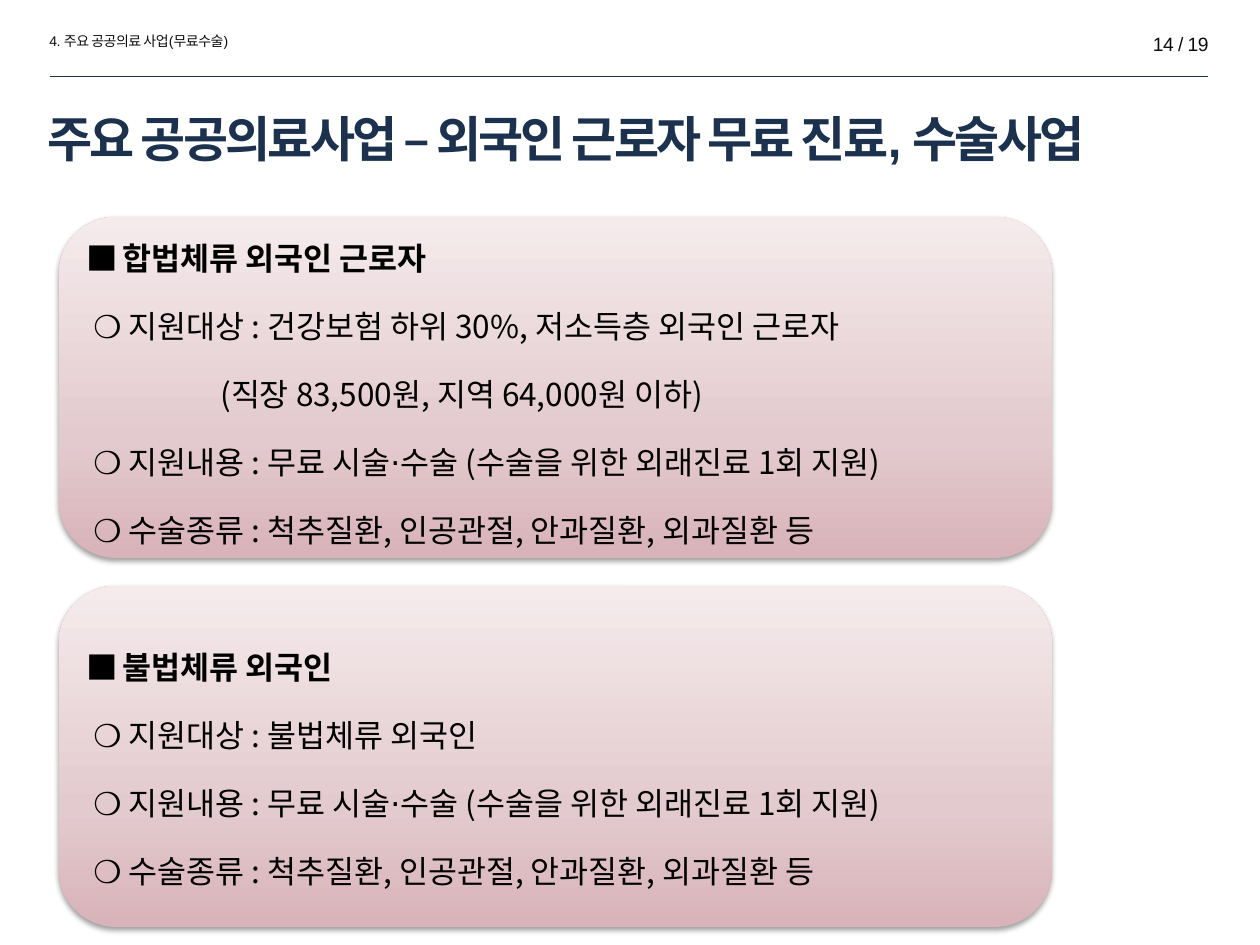
from lxml import etree
from pptx import Presentation
from pptx import util as u
from pptx.dml.color import RGBColor
from pptx.enum import shapes, text
from pptx.oxml import parse_xml
from pptx.oxml.ns import qn

NAVY = RGBColor(0x1C, 0x31, 0x4E)
INK = RGBColor(0x0D, 0x0D, 0x0D)
BLACK = RGBColor(0, 0, 0)
ROSE_STOPS = (
    (0, RGBColor(0xD8, 0xB3, 0xB9)),
    (35, RGBColor(0xE3, 0xCA, 0xCE)),
    (100, RGBColor(0xF5, 0xEB, 0xEC)),
)
LATIN = "Arial"
KOREAN = "Noto Sans CJK KR"
NAMESPACE = 'xmlns:a="http://schemas.openxmlformats.org/drawingml/2006/main"'

CONTENT = "지원내용 : 무료 시술⋅수술 (수술을 위한 외래진료 1회 지원)"
SURGERY = "수술종류 : 척추질환, 인공관절, 안과질환, 외과질환 등"
SECTIONS = (
    ("합법체류 외국인 근로자", (
        ("❍ 지원대상 : 건강보험 하위 30%, 저소득층 외국인 근로자", 7),
        ("(직장 83,500원, 지역 64,000원 이하)", 134),
        ("❍ " + CONTENT, 7),
        ("❍ " + SURGERY, 7),
    )),
    ("불법체류 외국인", (
        ("❍ 지원대상 : 불법체류 외국인", 7),
        ("❍ " + CONTENT, 7),
        ("❍ " + SURGERY, 7),
    )),
)


class SlideBuilder:
    pixels_per_inch = 126

    def __init__(self, presentation):
        self.slide = presentation.slides.add_slide(presentation.slide_layouts[6])

    def px(self, *lengths):
        return [u.Emu(round(n * 914400 / self.pixels_per_inch)) for n in lengths]

    def typeface(self, font, name, spacing=0):
        font.name = name
        properties = font._rPr
        etree.SubElement(properties, qn("a:ea")).set("typeface", KOREAN)
        if spacing:
            properties.set("spc", str(round(spacing * 100)))

    def panel(self, left, top, width, height):
        shape = self.slide.shapes.add_shape(
            shapes.MSO_SHAPE.ROUNDED_RECTANGLE, *self.px(left, top, width, height))
        shape.line.fill.background()
        stops = "".join(
            f'<a:gs pos="{position * 1000}"><a:srgbClr val="{color}"/></a:gs>'
            for position, color in ROSE_STOPS)
        properties = shape._element.spPr
        properties.find(qn("a:prstGeom")).addnext(parse_xml(
            f'<a:gradFill {NAMESPACE} rotWithShape="1"><a:gsLst>{stops}</a:gsLst>'
            '<a:lin ang="16200000" scaled="0"/></a:gradFill>'))
        properties.append(parse_xml(
            f'<a:effectLst {NAMESPACE}><a:outerShdw blurRad="39400" dist="20300" '
            'dir="5400000" rotWithShape="0"><a:srgbClr val="000000">'
            '<a:alpha val="38000"/></a:srgbClr></a:outerShdw></a:effectLst>'))

    def rule(self, left, right, top):
        connector = self.slide.shapes.add_connector(
            shapes.MSO_CONNECTOR.STRAIGHT, *self.px(left, top, right, top))
        connector.line.color.rgb = NAVY
        connector.line.width = u.Pt(0.25)
        etree.SubElement(connector._element.spPr, qn("a:effectLst"))

    def frame(self, left, top, width, height):
        box = self.slide.shapes.add_textbox(*self.px(left, top, width, height))
        box.text_frame.word_wrap = True
        return box.text_frame

    def label(self, place, words, size, color, spacing, bold=False,
              align=text.PP_ALIGN.LEFT, anchor=text.MSO_ANCHOR.TOP):
        frame = self.frame(*place)
        frame.vertical_anchor = anchor
        paragraph = frame.paragraphs[0]
        paragraph.text = words
        paragraph.alignment = align
        font = paragraph.font
        font.size, font.bold = u.Pt(size), bold
        font.color.rgb = color
        self.typeface(font, LATIN, spacing)

    def body_paragraph(self, frame, bold=False, indent=0):
        first = frame.paragraphs[0]
        paragraph = frame.add_paragraph() if first.runs else first
        paragraph.alignment = text.PP_ALIGN.JUSTIFY
        paragraph.line_spacing = 1.8
        paragraph._p.get_or_add_pPr().set("marL", str(self.px(indent)[0]))
        font = paragraph.font
        font.size, font.bold = u.Pt(18), bold
        font.color.rgb = BLACK
        return paragraph

    def outline(self, place, sections):
        frame = self.frame(*place)
        for number, (heading, items) in enumerate(sections):
            paragraph = self.body_paragraph(frame, bold=True)
            if number:
                paragraph.space_before = u.Pt(38.9)
            for words, name, spacing in (("■ ", LATIN, -1.5), (heading, KOREAN, 0)):
                run = paragraph.add_run()
                run.text = words
                self.typeface(run.font, name, spacing)
            for words, indent in items:
                paragraph = self.body_paragraph(frame, indent=indent)
                paragraph.add_run().text = words
                self.typeface(paragraph.font, KOREAN)


def main():
    presentation = Presentation()
    presentation.slide_width, presentation.slide_height = u.Inches(10), u.Inches(7.5)
    builder = SlideBuilder(presentation)
    for top in (586, 217):
        builder.panel(59, top, 993, 341)
    builder.label((37, 26, 218, 30), "4. 주요 공공의료 사업(무료수술)", 8, INK, -0.3)
    builder.rule(50, 1208, 76)
    builder.label((35, 97, 1186, 81), "주요 공공의료사업 – 외국인 근로자 무료 진료, 수술사업",
                  28, NAVY, -1.5, bold=True, anchor=text.MSO_ANCHOR.MIDDLE)
    builder.label((1003, 26, 218, 37), "14 / 19", 11, INK, -0.3,
                  align=text.PP_ALIGN.RIGHT)
    builder.outline((74, 203, 1119, 699), SECTIONS)
    presentation.save("out.pptx")


if __name__ == "__main__":
    main()
